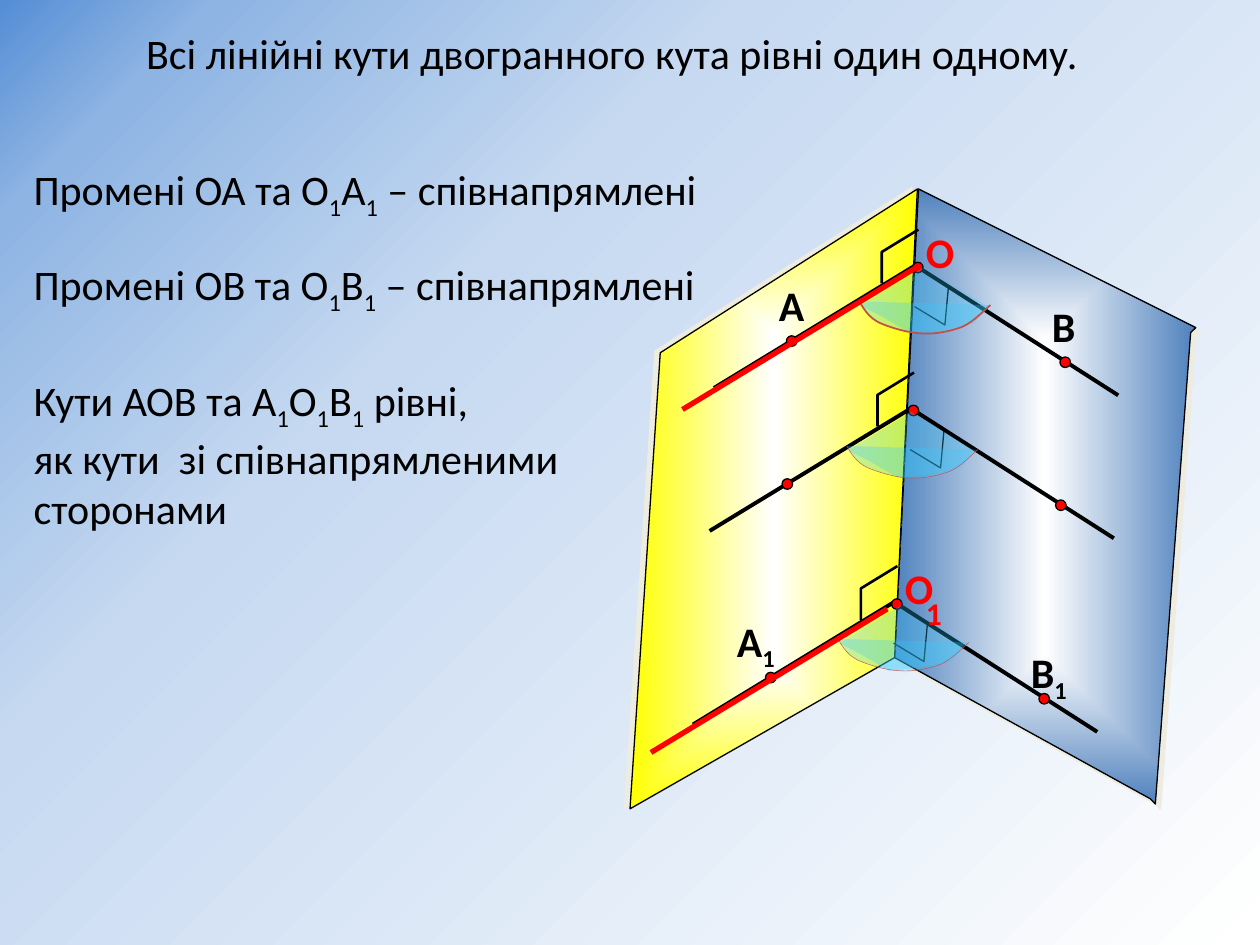
from dataclasses import dataclass
from typing import NamedTuple

from lxml import etree
from pptx import Presentation
from pptx import util as u
from pptx.dml.color import RGBColor
from pptx.enum import shapes, text
from pptx.oxml import parse_xml
from pptx.oxml.ns import nsdecls, qn


@dataclass(frozen=True)
class Theme:
    font: str = "Calibri"
    size: float = 24
    small: float = 18
    ink: str = "000000"
    red: str = "FF0000"
    sector: str = "33CCFF"
    arc: str = "C0504D"
    shadow: str = "EEECE1"
    blue_face: tuple = ((0, "FFFFFF"), (100, "4F81BD"))
    yellow_face: tuple = ((0, "FFFFFF"), (100, "FFFF00"))
    sky: tuple = ((0, "558ED5"), (10, "8EB4E3"), (34, "C6D9F1"), (100, "FFFFFF"))


class Point(NamedTuple):
    x: float
    y: float


class Face(NamedTuple):
    outline: list
    stops: tuple
    shadow_dist: float
    shadow_angle: int


class LinearAngle(NamedTuple):
    vertex: Point
    apex: Point          # top of the shaded sector
    arc_width: float
    labels: list         # (text, left, top, width, colour)


T = Theme()

FACES = [
    Face([(657.4, 456.5), (511.2, 375.8), (524.9, 108), (683.3, 187.2),
          (680.4, 190.1), (660.2, 459.4)], T.blue_face, 4.2, 45),
    Face([(360, 462.2), (511.2, 375.8), (524.2, 108), (377.3, 201.6)],
         T.yellow_face, 3.2, 198),
]
ANGLES = [
    LinearAngle(Point(520.5, 233.4), Point(520.6, 235.4), 0.25, []),
    LinearAngle(Point(523, 151.7), Point(527.8, 152.8), 1, [
        ("А", 438, 156, 36, T.ink), ("В", 594, 168, 36, T.ink),
        ("O", 522, 126, 36, T.red)]),
    LinearAngle(Point(511, 344), Point(515.5, 345.6), 0.25, [
        ("А_1", 414, 348, 54, T.ink), ("В_1", 582, 366, 54, T.ink),
        ("O", 510, 318, 36, T.red)]),
]

# Offsets from the vertex of a linear angle
RAY_ENDS = [(-115, 70), (116, 74.2)]
RIGHT_MARKS = [(1.5, [(1.8, -20.5), (-19.1, -7.7), (-19.1, 10.2)]),
               (0.75, [(-0.4, 23.5), (17, 34), (19, 12.2)])]
DOTS = [(-70.6, 43.2), (85.7, 55.3), (1.5, 1.2)]
DOT_SIZE = 6

# Offsets from the apex of a sector
SECTOR = [(36, 22), (0, 0), (-36, 22), (-24, 28), (-7.2, 37.8), (7.9, 36), (28.8, 32)]
ARC = [(-36.7, 19.5), (-33.8, 24.5), (-31, 28.8), (-25.2, 31.7), (-18.7, 34.6),
       (-8.6, 37.5), (-0.7, 37.8), (6.5, 38.2), (15.1, 36.7), (22.3, 33.9),
       (28.8, 31), (34.6, 24.5), (38.2, 21.6)]

RED_STARTS = [Point(525, 152), Point(507, 348)]
RED_RAY = Point(-135, 82)

TITLE = "Всі лінійні кути двогранного кута рівні один одному."
STATEMENTS = [  # text, space before
    ("Промені ОА та О_1А_1 – співнапрямлені", 0),
    ("Промені ОВ та О_1В_1 – співнапрямлені", 21.5),
    ("Кути АОВ та А_1О_1В_1 рівні,", 33.5),
    ("як кути  зі співнапрямленими сторонами", 0),
]


def shift(points: list, origin: Point) -> list:
    return [(origin.x + x, origin.y + y) for x, y in points]


def bezier(points: list, steps: int = 8) -> list:
    """Sample a chain of cubic curves."""
    out = [points[0]]
    for i in range(0, len(points) - 1, 3):
        a, b, c, d = points[i:i + 4]
        for k in range(1, steps + 1):
            t = k / steps
            w = ((1 - t) ** 3, 3 * t * (1 - t) ** 2, 3 * t * t * (1 - t), t ** 3)
            out.append(tuple(sum(f * q[n] for f, q in zip(w, (a, b, c, d)))
                             for n in (0, 1)))
    return out


def gradient(fill, props, stops: tuple, kind: str, to: tuple) -> None:
    """Give a shape or background a gradient that spreads from a focus."""
    fill.solid()
    gs = "".join(f'<a:gs pos="{pos * 1000}"><a:srgbClr val="{c}"/></a:gs>'
                 for pos, c in stops)
    rect = " ".join(f'{side}="{v * 1000}"' for side, v in zip("ltrb", to))
    solid = props.find(qn("a:solidFill"))
    props.replace(solid, parse_xml(
        f'<a:gradFill {nsdecls("a")} rotWithShape="1"><a:gsLst>{gs}</a:gsLst>'
        f'<a:path path="{kind}"><a:fillToRect {rect}/></a:path></a:gradFill>'))


def outline(sp, color: str | None, width: float) -> None:
    if color is None:
        sp.line.fill.background()
    else:
        sp.line.color.rgb = RGBColor.from_string(color)
        sp.line.width = u.Pt(width)


def freeform(s, points: list, close=False, fill=None, alpha=100, color=None, width=0.75):
    pts = [(u.Pt(x), u.Pt(y)) for x, y in points]
    fb = s.shapes.build_freeform(*pts[0], scale=1.0)
    fb.add_line_segments(pts[1:], close=close)
    sp = fb.convert_to_shape()
    sp.shadow.inherit = False
    if fill is None:
        sp.fill.background()
    else:
        sp.fill.solid()
        sp.fill.fore_color.rgb = RGBColor.from_string(fill)
        clr = sp.element.spPr.find(qn("a:solidFill"))[0]
        etree.SubElement(clr, qn("a:alpha")).set("val", str(alpha * 1000))
    outline(sp, color, width)
    return sp


def segment(s, start: Point, delta: tuple, color: str, width: float) -> None:
    ends = (start.x, start.y, start.x + delta[0], start.y + delta[1])
    cn = s.shapes.add_connector(shapes.MSO_CONNECTOR.STRAIGHT, *map(u.Pt, ends))
    outline(cn, color, width)
    etree.SubElement(cn.element.spPr, qn("a:effectLst"))


def dot(s, x: float, y: float) -> None:
    box = (x - DOT_SIZE / 2, y - DOT_SIZE / 2, DOT_SIZE, DOT_SIZE)
    sp = s.shapes.add_shape(shapes.MSO_SHAPE.OVAL, *map(u.Pt, box))
    sp.shadow.inherit = False
    sp.fill.solid()
    sp.fill.fore_color.rgb = RGBColor.from_string(T.red)
    outline(sp, T.ink, 0.75)


def write(p, content: str, size=T.size, color=T.ink, bold=False, before=0) -> None:
    """Fill a paragraph; the character after each "_" is a subscript."""
    p.alignment = text.PP_ALIGN.LEFT
    p.space_before = u.Pt(before)
    first, *rest = content.split("_")
    pieces = [(first, False)]
    for part in rest:
        pieces += [(part[0], True), (part[1:], False)]
    for piece, sub in pieces:
        if not piece:
            continue
        r = p.add_run()
        r.text = piece
        r.font.name, r.font.size, r.font.bold = T.font, u.Pt(size), bold
        r.font.color.rgb = RGBColor.from_string(color)
        if sub:
            r.font._element.set("baseline", "-25000")


def frame(sp, box: tuple):
    sp.left, sp.top, sp.width, sp.height = map(u.Pt, box)
    tf = sp.text_frame
    tf.word_wrap = True
    tf.auto_size = text.MSO_AUTO_SIZE.NONE
    tf.vertical_anchor = text.MSO_ANCHOR.TOP
    return tf


def label(s, content: str, left: float, top: float, width: float, color: str, size=T.size):
    box = (left, top, width, 36)
    tf = frame(s.shapes.add_textbox(*map(u.Pt, box)), box)
    write(tf.paragraphs[0], content, size=size, color=color, bold=True)


def main() -> None:
    prs = Presentation()
    prs.slide_width, prs.slide_height = u.Pt(720), u.Pt(540)
    s = prs.slides.add_slide(prs.slide_layouts[1])
    fill = s.background.fill
    fill.solid()
    gradient(fill, s.element.find(".//" + qn("p:bgPr")), T.sky, "circle", (0, 0, 100, 100))

    # Title and statements
    write(frame(s.shapes.title, (76.3, 12, 557, 36)).paragraphs[0], TITLE)
    tf = frame(s.placeholders[1], (12, 90, 402, 214))
    for i, (content, before) in enumerate(STATEMENTS):
        p = tf.add_paragraph() if i else tf.paragraphs[0]
        write(p, content, before=before)
        pPr = p._p.get_or_add_pPr()
        pPr.set("marL", "0")
        pPr.set("indent", "0")
        etree.SubElement(pPr, qn("a:buNone"))

    # Faces of the dihedral angle
    for face in FACES:
        sp = freeform(s, face.outline, close=True, color=T.ink)
        gradient(sp.fill, sp.element.spPr, face.stops, "rect", (50, 50, 50, 50))
        sp.element.spPr.find(qn("a:effectLst")).append(parse_xml(
            f'<a:outerShdw {nsdecls("a")} dist="{u.Pt(face.shadow_dist)}" '
            f'dir="{face.shadow_angle * 60000}" algn="ctr" rotWithShape="0">'
            f'<a:srgbClr val="{T.shadow}"/></a:outerShdw>'))

    # Linear angles: rays, right-angle marks, labels, points
    for angle in ANGLES:
        for end in RAY_ENDS:
            segment(s, angle.vertex, end, T.ink, 2.25)
        for width, mark in RIGHT_MARKS:
            freeform(s, shift(mark, angle.vertex), color=T.ink, width=width)
        for item in angle.labels:
            label(s, *item)
        for x, y in shift(DOTS, angle.vertex):
            dot(s, x, y)

    # Shaded sectors with their arcs
    for angle in reversed(ANGLES):
        freeform(s, shift(SECTOR, angle.apex), close=True, fill=T.sector, alpha=28)
        freeform(s, shift(bezier(ARC), angle.apex), fill=T.sector, alpha=28,
                 color=T.arc, width=angle.arc_width)

    # Highlighted rays and the index of the lower vertex
    for start in RED_STARTS:
        segment(s, start, RED_RAY, T.red, 3)
    label(s, "1", 522, 336, 24.5, T.red, size=T.small)

    prs.save("out.pptx")


if __name__ == "__main__":
    main()
